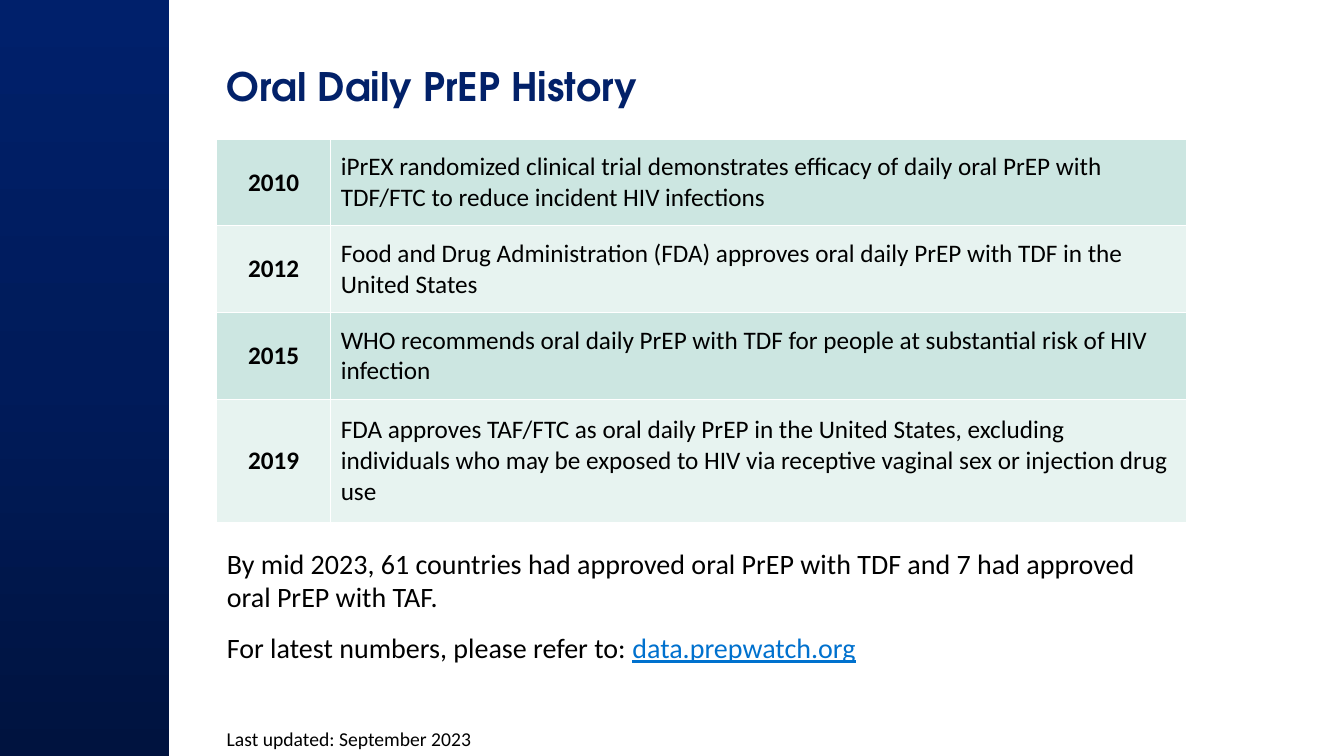
from copy import deepcopy

from lxml import etree
from pptx import Presentation, util as u
from pptx.dml import color
from pptx.enum import shapes, text
from pptx.oxml import ns

BODY_FONT = "Calibri"
LEFT, WIDTH = 2.15, 9.62
MILESTONES = [
    ("2010", "iPrEX randomized clinical trial demonstrates efficacy of daily oral PrEP with TDF/FTC to reduce incident HIV infections"),
    ("2012", "Food and Drug Administration (FDA) approves oral daily PrEP with TDF in the United States"),
    ("2015", "WHO recommends oral daily PrEP with TDF for people at substantial risk of HIV infection"),
    ("2019", "FDA approves TAF/FTC as oral daily PrEP in the United States, excluding individuals who may be exposed to HIV via receptive vaginal sex or injection drug use"),
]
COLUMN_WIDTHS = [1.13, 8.49]
ROW_HEIGHTS = [0.86, 0.86, 0.86, 1.23]
BAND_FILLS = ["CCE6E1", "E7F3F0"]


def rgb(value):
    return color.RGBColor.from_string(value)


def add_text(paragraph, words, size, hue="000000", **format_values):
    run = paragraph.add_run()
    run.text = words
    run.font.color.rgb = rgb(hue)
    values = {"name": BODY_FONT, "size": u.Pt(size), **format_values}
    for name, value in values.items():
        setattr(run.font, name, value)


presentation = Presentation()
presentation.slide_width = u.Inches(13.33)
presentation.slide_height = u.Inches(7.5)
slide = presentation.slides.add_slide(presentation.slide_layouts[1])
title, body = slide.placeholders

side_band = slide.shapes.add_shape(
    shapes.MSO_SHAPE.RECTANGLE, 0, 0, u.Inches(1.68), presentation.slide_height)
side_band.shadow.inherit = False
side_band.line.fill.background()
side_band.fill.gradient()
side_band.fill.gradient_angle = 90
stop_list = side_band.fill._fill._gradFill.gsLst
stop_list.insert(1, deepcopy(stop_list[0]))
stop_list[1].set("pos", "50000")
for stop, hue in zip(side_band.fill.gradient_stops, ["00133F", "001B5A", "00206B"]):
    stop.color.rgb = rgb(hue)

footnote = slide.shapes.add_textbox(0, 0, 0, 0)
for shape, top, width, height in [
    (title, 0.57, 10, 0.92), (body, 5.37, WIDTH, 1.28), (footnote, 7.16, 6.66, 0.34),
]:
    placement = {"left": LEFT, "top": top, "width": width, "height": height}
    for name, value in placement.items():
        setattr(shape, name, u.Inches(value))
    frame_values = {"word_wrap": True, "auto_size": text.MSO_AUTO_SIZE.NONE,
                    "vertical_anchor": text.MSO_ANCHOR.TOP}
    for name, value in frame_values.items():
        setattr(shape.text_frame, name, value)

heading = title.text_frame.paragraphs[0]
heading.alignment = text.PP_ALIGN.LEFT
add_text(heading, "Oral Daily PrEP History", 28, "022169", name="TeX Gyre Adventor", bold=True)

table_frame = slide.shapes.add_table(
    len(MILESTONES), len(COLUMN_WIDTHS), u.Inches(LEFT), u.Inches(1.38),
    u.Inches(WIDTH), u.Inches(sum(ROW_HEIGHTS)))
table = table_frame.table
table.first_row = False
table.horz_banding = False
for column, width in zip(table.columns, COLUMN_WIDTHS):
    column.width = u.Inches(width)

for row_index, milestone in enumerate(MILESTONES):
    table.rows[row_index].height = u.Inches(ROW_HEIGHTS[row_index])
    for column_index, words in enumerate(milestone):
        is_year = column_index == 0
        cell = table.cell(row_index, column_index)
        cell.vertical_anchor = text.MSO_ANCHOR.MIDDLE
        paragraph = cell.text_frame.paragraphs[0]
        paragraph.alignment = text.PP_ALIGN.CENTER if is_year else text.PP_ALIGN.LEFT
        add_text(paragraph, words, 18, bold=is_year)
        properties = cell._tc.get_or_add_tcPr()
        for side in ["lnL", "lnR", "lnT", "lnB"]:
            border = etree.SubElement(properties, ns.qn(f"a:{side}"), w=str(u.Pt(1)))
            fill = etree.SubElement(border, ns.qn("a:solidFill"))
            etree.SubElement(fill, ns.qn("a:srgbClr"), val="FFFFFF")
        cell.fill.solid()
        cell.fill.fore_color.rgb = rgb(BAND_FILLS[row_index % 2])

summary = body.text_frame.paragraphs[0]
reference = body.text_frame.add_paragraph()
for paragraph, space_before in [(summary, 0), (reference, 6)]:
    properties = paragraph._p.get_or_add_pPr()
    properties.set("marL", "0")
    properties.set("indent", "0")
    etree.SubElement(properties, ns.qn("a:buNone"))
    paragraph.space_before = u.Pt(space_before)
    paragraph.space_after = u.Pt(6)
add_text(summary, "By mid 2023, 61 countries had approved oral PrEP with TDF and 7 had approved oral PrEP with TAF.", 20)
add_text(reference, "For latest numbers, please refer to: ", 20)
add_text(reference, "data.prepwatch.org", 20, "0071CE", underline=True)

add_text(footnote.text_frame.paragraphs[0], "Last updated: September 2023", 14)

presentation.save("out.pptx")
